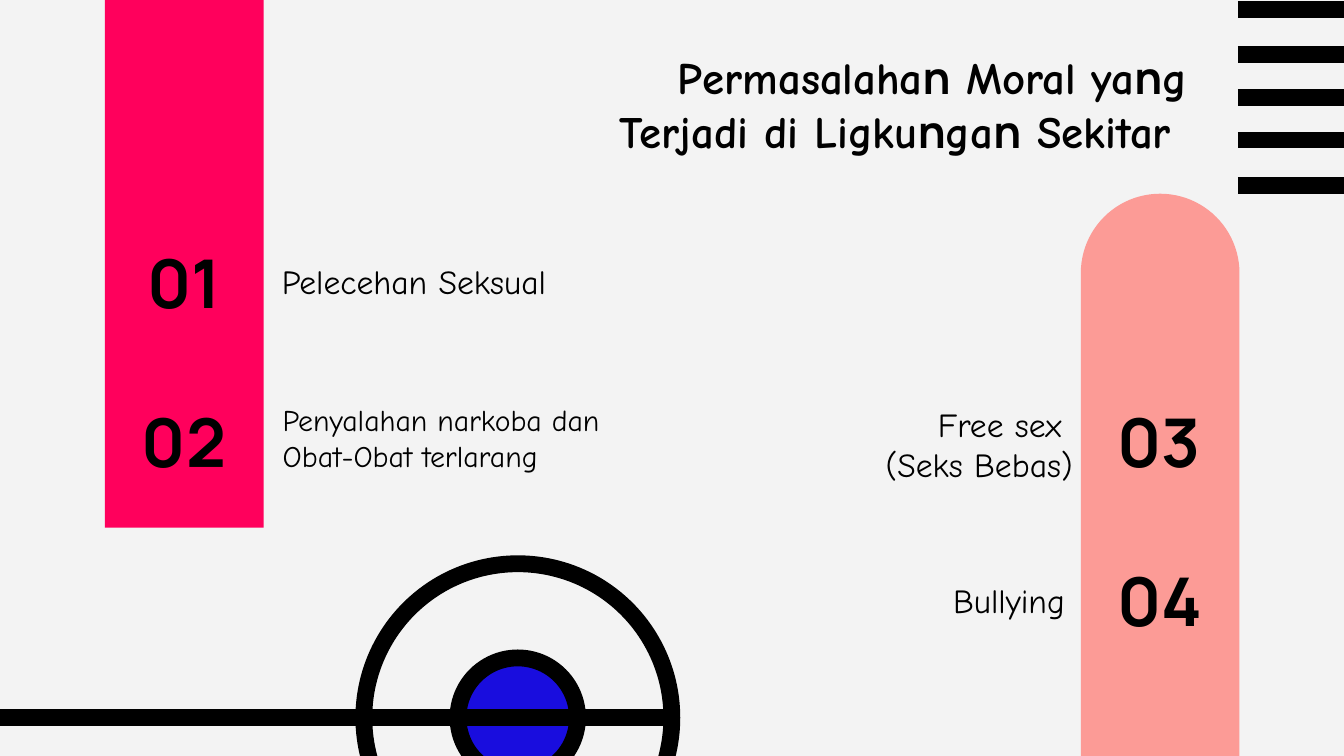
from lxml import etree
from pptx import Presentation
from pptx.dml.color import RGBColor
from pptx.enum import shapes, text
from pptx.oxml.ns import qn
from pptx.util import Pt

BLACK, PAPER, BLUE, PINK, SALMON = "000000", "F3F3F3", "190DDE", "FF005C", "FC9B96"
BODY, DISPLAY = "Comic Neue", "Manrope"
WIDTH, HEIGHT = 720, 405
STROKE = 9
LEFT, CENTER, RIGHT = text.PP_ALIGN.LEFT, text.PP_ALIGN.CENTER, text.PP_ALIGN.RIGHT

# Title in alternating body and display fonts
TITLE = ["Permasalaha", "n", " Moral ya", "n", "g Terjadi di Ligku", "n", "ga", "n", " Sekitar "]
TITLE_BOX = (308, 23.8, 335, 63.4)

# number, number box left and top, topic, topic box left and top, size, alignment
PROBLEMS = [
    ("01", 59, 128.2, ["Pelecehan Seksual"], 144, 134.8, 18, LEFT),
    ("02", 59, 213.5, ["Penyalahan narkoba dan Obat-Obat terlarang"], 144.4, 218.4, 16, LEFT),
    ("03", 581.3, 213.5, ["Free sex ", "(Seks Bebas)"], 380.2, 222, 18, RIGHT),
    ("04", 581.6, 298.8, ["Bullying"], 376, 305.5, 18, RIGHT),
]
NUMBER_SIZE, TOPIC_SIZE = (79.2, 45.4), (201.6, 32)

STRIPES = [5, 29.2, 52.2, 75, 99.5]
STRIPE_LEFT = 663.2
RING_CENTER = (277.4, 384.5)
RINGS = [(82.5, None), (32, BLUE)]  # radius, fill
PILLARS = [
    (shapes.MSO_SHAPE.ROUND_2_SAME_RECTANGLE, (579, 103.8, 85, 301.2), SALMON),
    (shapes.MSO_SHAPE.RECTANGLE, (56.2, 0, 85, 282.7), PINK),
]


def color(value):
    return RGBColor.from_string(value)


def points(values):
    return [Pt(value) for value in values]


def add_line(page, x1, y1, x2, y2):
    line = page.shapes.add_connector(shapes.MSO_CONNECTOR.STRAIGHT, *points((x1, y1, x2, y2)))
    line.line.color.rgb = color(BLACK)
    line.line.width = Pt(STROKE)
    etree.SubElement(line._element.spPr, qn("a:effectLst"))


def add_figure(page, kind, box, fill=None, outlined=False):
    figure = page.shapes.add_shape(kind, *points(box))
    figure.shadow.inherit = False
    if fill:
        figure.fill.solid()
        figure.fill.fore_color.rgb = color(fill)
    else:
        figure.fill.background()
    if outlined:
        figure.line.color.rgb = color(BLACK)
        figure.line.width = Pt(STROKE)
    else:
        figure.line.fill.background()
    return figure


def write(box, place, lines, size, align, bold=False):
    """Place the box and fill it; each line is a list of (words, font) pairs."""
    for name, value in zip(("left", "top", "width", "height"), points(place)):
        setattr(box, name, value)
    frame = box.text_frame
    layout = {"word_wrap": True, "auto_size": text.MSO_AUTO_SIZE.NONE,
              "vertical_anchor": text.MSO_ANCHOR.MIDDLE}
    layout.update({f"margin_{side}": Pt(7.2) for side in ("left", "right", "top", "bottom")})
    for name, value in layout.items():
        setattr(frame, name, value)
    para = frame.paragraphs[0]
    para.alignment = align
    for index, line in enumerate(lines):
        if index:
            para.add_line_break()
        for words, font in line:
            span = para.add_run()
            span.text = words
            for name, value in {"name": font, "size": Pt(size), "bold": bold}.items():
                setattr(span.font, name, value)
            span.font.color.rgb = color(BLACK)


def add_text(page, place, *content):
    write(page.shapes.add_textbox(*points(place)), place, *content)


def main():
    deck = Presentation()
    deck.slide_width, deck.slide_height = points((WIDTH, HEIGHT))
    page = deck.slides.add_slide(deck.slide_layouts[5])
    page.background.fill.solid()
    page.background.fill.fore_color.rgb = color(PAPER)

    for y in STRIPES:
        add_line(page, STRIPE_LEFT, y, WIDTH, y)

    x, y = RING_CENTER
    for radius, fill in RINGS:
        box = (x - radius, y - radius, 2 * radius, 2 * radius)
        add_figure(page, shapes.MSO_SHAPE.OVAL, box, fill, outlined=True)
    add_line(page, 0, y, x + RINGS[0][0], y)

    for kind, box, fill in PILLARS:
        pillar = add_figure(page, kind, box, fill)
        if len(pillar.adjustments):
            pillar.adjustments[0] = 0.5

    title = [(words, (BODY, DISPLAY)[index % 2]) for index, words in enumerate(TITLE)]
    write(page.shapes.title, TITLE_BOX, [title], 24, RIGHT, True)
    for number, left, top, topic, topic_left, topic_top, size, align in PROBLEMS:
        add_text(page, (left, top, *NUMBER_SIZE), [[(number, DISPLAY)]], 36, CENTER, True)
        add_text(page, (topic_left, topic_top, *TOPIC_SIZE),
                 [[(line, BODY)] for line in topic], size, align)

    deck.save("out.pptx")


if __name__ == "__main__":
    main()
